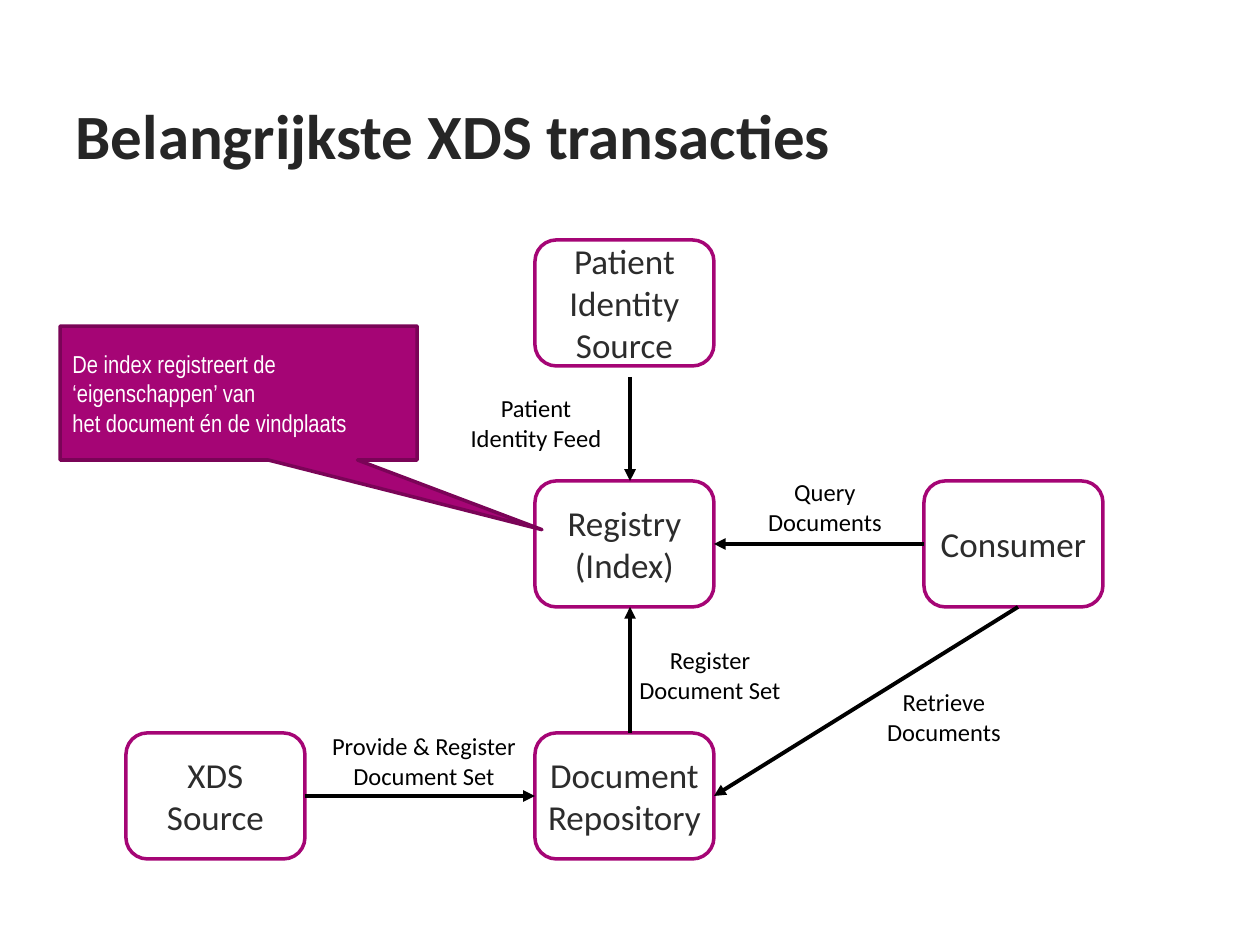
from collections import namedtuple

from lxml.etree import SubElement
from pptx import Presentation
from pptx.dml.color import RGBColor
from pptx.enum.shapes import MSO_CONNECTOR, MSO_SHAPE
from pptx.enum.text import MSO_ANCHOR, MSO_AUTO_SIZE, PP_ALIGN
from pptx.oxml.ns import qn
from pptx.util import Emu, Pt

PX_PER_INCH = 126
PURPLE = RGBColor(0xA5, 0x05, 0x75)
DARK_PURPLE = RGBColor(0x7A, 0x04, 0x57)
WHITE = RGBColor(0xFF, 0xFF, 0xFF)
BLACK = RGBColor(0x00, 0x00, 0x00)
TITLE_GREY = RGBColor(0x26, 0x26, 0x26)
NODE_GREY = RGBColor(0x2C, 0x2C, 0x2C)

TITLE_FONT = {"name": "Calibri", "size": Pt(36), "bold": True}
NODE_FONT = {"name": "Calibri", "size": Pt(20)}
LABEL_FONT = {"name": "Calibri", "size": Pt(14)}
CALLOUT_FONT = {"name": "Arial Narrow", "size": Pt(14)}

Box = namedtuple("Box", "left top width height")

NODE_WIDTH, NODE_HEIGHT = 179, 126
LEFT_COLUMN, MIDDLE_COLUMN, RIGHT_COLUMN = 126, 535, 924
TOP_ROW, MIDDLE_ROW, BOTTOM_ROW = 240, 481, 733
AXIS = 630
MIDDLE_LINE = MIDDLE_ROW + NODE_HEIGHT // 2
BOTTOM_LINE = BOTTOM_ROW + NODE_HEIGHT // 2
MIDDLE_EDGE = MIDDLE_COLUMN + NODE_WIDTH
LABEL_HEIGHT = 72

NODES = [
    (LEFT_COLUMN, BOTTOM_ROW, ["XDS", "Source"]),
    (MIDDLE_COLUMN, BOTTOM_ROW, ["Document", "Repository"]),
    (MIDDLE_COLUMN, MIDDLE_ROW, ["Registry", "(Index)"]),
    (RIGHT_COLUMN, MIDDLE_ROW, ["Consumer"]),
    (MIDDLE_COLUMN, TOP_ROW, ["Patient", "Identity", "Source"]),
]

TRANSACTIONS = [
    ((LEFT_COLUMN + NODE_WIDTH, BOTTOM_LINE), (MIDDLE_COLUMN, BOTTOM_LINE),
     Box(318, 725, 212, LABEL_HEIGHT), ["Provide & Register", "Document Set"]),
    ((AXIS, BOTTOM_ROW), (AXIS, MIDDLE_ROW + NODE_HEIGHT),
     Box(626, 639, 168, LABEL_HEIGHT), ["Register", "Document Set"]),
    ((RIGHT_COLUMN, MIDDLE_LINE), (MIDDLE_EDGE, MIDDLE_LINE),
     Box(755, 471, 140, LABEL_HEIGHT), ["Query", "Documents"]),
    ((1018, MIDDLE_ROW + NODE_HEIGHT), (MIDDLE_EDGE, BOTTOM_LINE),
     Box(874, 681, 140, LABEL_HEIGHT), ["Retrieve", "Documents"]),
    ((AXIS, 377), (AXIS, MIDDLE_ROW),
     Box(457, 387, 158, LABEL_HEIGHT), ["Patient", "Identity Feed"]),
]


def px(*lengths):
    """Turn pixel lengths into EMU."""
    return [Emu(round(length * 914400 / PX_PER_INCH)) for length in lengths]


def apply_format(target, values):
    """Set every attribute in values on the target."""
    for name, value in values.items():
        setattr(target, name, value)


def write_text(shape, lines, font, color, alignment, frame_format):
    """Write one formatted paragraph for each line."""
    frame = shape.text_frame
    apply_format(frame, frame_format)
    frame.text = "\n".join(lines)
    for paragraph in frame.paragraphs:
        paragraph.alignment = alignment
        apply_format(paragraph.font, font)
        paragraph.font.color.rgb = color


def add_box(slide, kind, box, fill, line, adjustments):
    """Add a filled and outlined preset shape without a shadow."""
    shape = slide.shapes.add_shape(kind, *px(*box))
    shape.shadow.inherit = False
    shape.fill.solid()
    shape.fill.fore_color.rgb = fill
    shape.line.color.rgb = line
    shape.line.width = Pt(2)
    for index, value in enumerate(adjustments):
        shape.adjustments[index] = value
    return shape


def add_title(slide, box, text):
    """Place the slide title in its placeholder."""
    title = slide.shapes.title
    apply_format(title, dict(zip(box._fields, px(*box))))
    write_text(title, [text], TITLE_FONT, TITLE_GREY, PP_ALIGN.LEFT,
               {"vertical_anchor": MSO_ANCHOR.MIDDLE, "word_wrap": True})


def add_node(slide, box, lines):
    """Add one rounded system node."""
    node = add_box(slide, MSO_SHAPE.ROUNDED_RECTANGLE, box, WHITE, PURPLE, [0.17])
    write_text(node, lines, NODE_FONT, NODE_GREY, PP_ALIGN.CENTER,
               {"vertical_anchor": MSO_ANCHOR.MIDDLE, "word_wrap": False})


def add_transaction(slide, start, end, box, lines):
    """Add a group of one arrow and its label."""
    group = slide.shapes.add_group_shape()
    arrow = group.shapes.add_connector(MSO_CONNECTOR.STRAIGHT, *px(*start, *end))
    arrow.line.color.rgb = BLACK
    arrow.line.width = Pt(2.25)
    SubElement(arrow.line._get_or_add_ln(), qn("a:tailEnd"), type="triangle")
    SubElement(arrow._element.spPr, qn("a:effectLst"))
    label = group.shapes.add_textbox(*px(*box))
    write_text(label, lines, LABEL_FONT, BLACK, PP_ALIGN.CENTER,
               {"word_wrap": False, "auto_size": MSO_AUTO_SIZE.SHAPE_TO_FIT_TEXT})


def add_callout(slide, box, lines):
    """Add the callout that points at the registry."""
    callout = add_box(slide, MSO_SHAPE.RECTANGULAR_CALLOUT, box,
                      PURPLE, DARK_PURPLE, [0.85, 1.02])
    write_text(callout, lines, CALLOUT_FONT, WHITE, PP_ALIGN.LEFT,
               {"vertical_anchor": MSO_ANCHOR.MIDDLE, "word_wrap": True})


def main():
    """Build the slide with the main XDS transactions."""
    presentation = Presentation()
    presentation.slide_width, presentation.slide_height = px(1260, 945)
    slide = presentation.slides.add_slide(presentation.slide_layouts[5])
    add_title(slide, Box(63, 55, 1134, 158), "Belangrijkste XDS transacties")
    for left, top, lines in NODES:
        add_node(slide, Box(left, top, NODE_WIDTH, NODE_HEIGHT), lines)
    for transaction in TRANSACTIONS:
        add_transaction(slide, *transaction)
    add_callout(slide, Box(60, 326, 357, 134),
                ["De index registreert de ‘eigenschappen’ van",
                 "het document én de vindplaats"])
    presentation.save("out.pptx")


if __name__ == "__main__":
    main()
